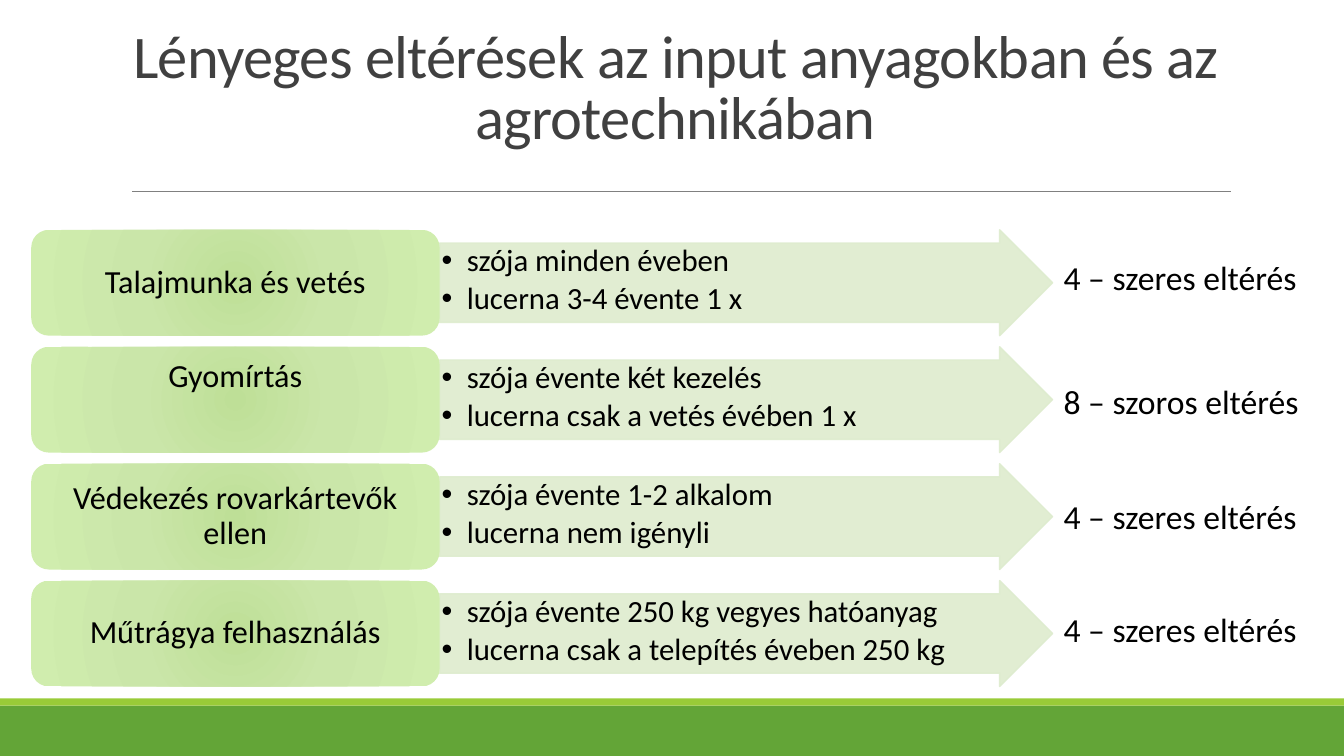
from pptx import Presentation
from pptx.dml.color import RGBColor
from pptx.enum.shapes import MSO_CONNECTOR as Connector, MSO_SHAPE as Shape
from pptx.enum.text import MSO_ANCHOR as Anchor, PP_ALIGN as Align
from pptx.oxml import parse_xml
from pptx.oxml.ns import nsdecls
from pptx.util import Inches, Pt

FONT = "Calibri"
ROW_TOP, ROW_PITCH, ROW_HEIGHT = 2.28, 1.16, 1.05
GRADIENT = [(0, "BEDF97"), (45, "CAE6A9"), (100, "D0EDAE")]
ROWS = [
    ("Talajmunka és vetés", Anchor.MIDDLE,
     ["szója minden éveben", "lucerna 3-4 évente 1 x"],
     "4 – szeres eltérés", 2.5),
    ("Gyomírtás", Anchor.TOP,
     ["szója évente két kezelés", "lucerna csak a vetés évében 1 x"],
     "8 – szoros eltérés", 3.73),
    ("Védekezés rovarkártevők ellen", Anchor.MIDDLE,
     ["szója évente 1-2 alkalom", "lucerna nem igényli"],
     "4 – szeres eltérés", 4.87),
    ("Műtrágya felhasználás", Anchor.MIDDLE,
     ["szója évente 250 kg vegyes hatóanyag",
      "lucerna csak a telepítés éveben 250 kg"],
     "4 – szeres eltérés", 5.99),
]


def color(value):
    return RGBColor.from_string(value)


def add_block(page, kind, left, top, width, height, fill):
    block = page.shapes.add_shape(
        kind, Inches(left), Inches(top), Inches(width), Inches(height))
    block.shadow.inherit = False
    block.fill.solid()
    block.fill.fore_color.rgb = color(fill)
    block.line.fill.background()
    return block


def set_radial_fill(block):
    stops = "".join(
        f'<a:gs pos="{place * 1000}"><a:srgbClr val="{value}"/></a:gs>'
        for place, value in GRADIENT)
    gradient = parse_xml(
        f'<a:gradFill {nsdecls("a")} rotWithShape="1"><a:gsLst>{stops}</a:gsLst>'
        '<a:path path="circle"><a:fillToRect l="100000" t="100000" '
        'r="100000" b="100000"/></a:path></a:gradFill>')
    properties = block.element.spPr
    properties.replace(properties.find("{*}solidFill"), gradient)


def set_opacity(block, percent):
    for tint in block.element.spPr.iter("{*}srgbClr"):
        tint.append(parse_xml(f'<a:alpha {nsdecls("a")} val="{percent * 1000}"/>'))


def add_bullet(para):
    properties = para._p.get_or_add_pPr()
    properties.set("marL", str(Inches(0.25)))
    properties.set("indent", str(-Inches(0.25)))
    properties.append(parse_xml(f'<a:buFont {nsdecls("a")} typeface="Arial"/>'))
    properties.append(parse_xml(f'<a:buChar {nsdecls("a")} char="•"/>'))


def add_text(page, place, lines, size, tint="000000", align=Align.LEFT,
             anchor=Anchor.TOP, margins=(0.1, 0.05), spacing=1.0, after=0,
             bullets=False):
    box = page.shapes.add_textbox(*map(Inches, place))
    frame = box.text_frame
    frame.word_wrap = True
    frame.vertical_anchor = anchor
    frame.margin_left = frame.margin_right = Inches(margins[0])
    frame.margin_top = frame.margin_bottom = Inches(margins[1])
    for index, line in enumerate(lines):
        para = frame.add_paragraph() if index else frame.paragraphs[0]
        para.alignment = align
        para.line_spacing = spacing
        para.space_after = Pt(after)
        if bullets:
            add_bullet(para)
        span = para.add_run()
        span.text = line
        span.font.name = FONT
        span.font.size = Pt(size)
        span.font.color.rgb = color(tint)
    return box


def add_title(page, text):
    box = add_text(page, (1.2, 0.31, 11, 1.25), [text], 43.2, "404040",
                   Align.CENTER, Anchor.BOTTOM, spacing=0.85)
    for span in box.text_frame.paragraphs[0].runs:
        span.font._element.set("spc", "-50")


def add_rule(page):
    rule = page.shapes.add_connector(
        Connector.STRAIGHT, Inches(1.31), Inches(1.9), Inches(12.21), Inches(1.9))
    rule.line.color.rgb = color("808080")
    rule.line.width = Pt(0.5)
    rule.element.spPr.append(parse_xml(f'<a:effectLst {nsdecls("a")}/>'))


def add_row(page, top, topic, anchor, details, result, result_top):
    arrow = add_block(page, Shape.RIGHT_ARROW, 4.36, top, 6.08, ROW_HEIGHT, "DEECCE")
    arrow.adjustments[0], arrow.adjustments[1] = 0.75, 0.5
    arrow.line.color.rgb = color("DEECCE")
    arrow.line.width = Pt(1)
    set_opacity(arrow, 90)
    add_text(page, (4.36, top + 0.13, 5.69, 0.79), details, 22,
             margins=(0.02, 0.02), spacing=0.9, after=3.3, bullets=True)
    card = add_block(page, Shape.ROUNDED_RECTANGLE, 0.31, top, 4.05, ROW_HEIGHT, "CAE6A9")
    set_radial_fill(card)
    add_text(page, (0.36, top + 0.05, 3.95, 0.95), [topic], 23,
             align=Align.CENTER, anchor=anchor, margins=(0.1, 0.08), spacing=0.9)
    add_text(page, (10.45, result_top, 2.61, 0.5), [result], 24)


def main():
    deck = Presentation()
    deck.slide_width, deck.slide_height = Inches(13.33), Inches(7.5)
    page = deck.slides.add_slide(deck.slide_layouts[6])
    add_block(page, Shape.RECTANGLE, 0, 7, 13.33, 0.5, "63A537")
    add_block(page, Shape.RECTANGLE, 0, 6.93, 13.33, 0.07, "99CB38")
    add_rule(page)
    add_title(page, "Lényeges eltérések az input anyagokban és az agrotechnikában")
    for index, row in enumerate(ROWS):
        add_row(page, ROW_TOP + index * ROW_PITCH, *row)
    deck.save("out.pptx")


if __name__ == "__main__":
    main()
